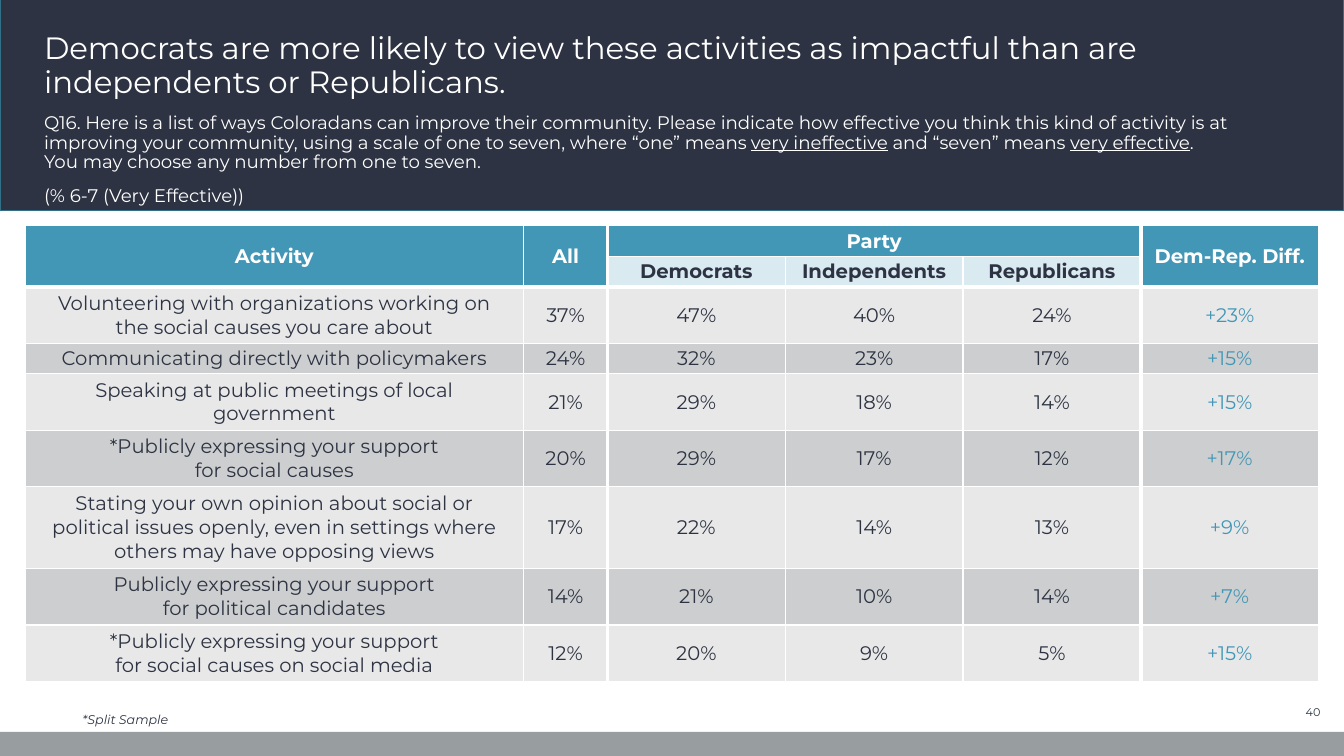
import pptx
import pptx.util
import pptx.dml.color
import pptx.enum.shapes
import pptx.enum.text
from lxml import etree

Cm, Pt = pptx.util.Cm, pptx.util.Pt
RGBColor = pptx.dml.color.RGBColor
ALIGN, ANCHOR = pptx.enum.text.PP_ALIGN, pptx.enum.text.MSO_ANCHOR

# Content
HEADLINE = ("Democrats are more likely to view these activities as impactful "
            "than are independents or Republicans.")
QUESTION = [  # (text, underlined)
    ("Q16. Here is a list of ways Coloradans can improve their community. "
     "Please indicate how effective you think this kind of activity is at "
     "improving your community, using a scale of one to seven, where “one” means ", False),
    ("very ineffective", True),
    (" and “seven” means ", False),
    ("very effective", True),
    (".", False),
]
QUESTION_END = "You may choose any number from one to seven."
MEASURE = "(% 6-7 (Very Effective))"
FOOTNOTE = "*Split Sample"
PAGE_NUMBER = "40"

HEADINGS = [
    ("Activity", "All", "Party", "", "", "Dem-Rep. Diff."),
    ("", "", "Democrats", "Independents", "Republicans", ""),
]
RATINGS = [  # activity (\v breaks the line), all, dem., ind., rep., difference
    ("Volunteering with organizations working on\vthe social causes you care about",
     "37%", "47%", "40%", "24%", "+23%"),
    ("Communicating directly with policymakers", "24%", "32%", "23%", "17%", "+15%"),
    ("Speaking at public meetings of local government", "21%", "29%", "18%", "14%", "+15%"),
    ("*Publicly expressing your support\vfor social causes", "20%", "29%", "17%", "12%", "+17%"),
    ("Stating your own opinion about social or\vpolitical issues openly, even in "
     "settings where others may have opposing views", "17%", "22%", "14%", "13%", "+9%"),
    ("Publicly expressing your support\vfor political candidates",
     "14%", "21%", "10%", "14%", "+7%"),
    ("*Publicly expressing your support\vfor social causes on social media",
     "12%", "20%", "9%", "5%", "+15%"),
]
MERGES = [((0, 0), (1, 0)), ((0, 1), (1, 1)), ((0, 2), (0, 4)), ((0, 5), (1, 5))]
COLUMN_WIDTHS = [12.57, 2.11] + [4.48] * 4
ROW_LINES = [1, 1, 2, 1, 2, 2, 3, 2, 2]
LINE_HEIGHTS = {1: 0.77, 2: 1.42, 3: 2.07}
THICK_COLUMN_EDGES = (2, 5)
THICK_ROW_EDGE = 2

# Style
FONT = "Montserrat"
NAVY = RGBColor(0x2D, 0x33, 0x42)
BAND_LINE = RGBColor(0x32, 0x70, 0x87)
GREY = RGBColor(0x98, 0x9D, 0xA0)
WHITE = RGBColor(0xFF, 0xFF, 0xFF)
TEAL = RGBColor(0x43, 0x97, 0xB6)
PALE_TEAL = RGBColor(0xD9, 0xEA, 0xF1)
ROW_FILLS = [RGBColor(0xE8, 0xE8, 0xE9), RGBColor(0xCD, 0xCE, 0xCF)]


def style(font, size, color, bold=False, italic=False):
    font.name, font.size, font.bold, font.italic = FONT, Pt(size), bold, italic
    font.color.rgb = color


def add_band(top, height, fill, line=None):
    band = slide.shapes.add_shape(pptx.enum.shapes.MSO_SHAPE.RECTANGLE,
                                  0, Cm(top), deck.slide_width, Cm(height))
    band.shadow.inherit = False
    band.fill.solid()
    band.fill.fore_color.rgb = fill
    if line is None:
        band.line.fill.background()
    else:
        band.line.color.rgb = line
        band.line.width = Pt(1)


def add_text(box, text, size, color, anchor=ANCHOR.TOP, align=ALIGN.LEFT, italic=False):
    frame = slide.shapes.add_textbox(*map(Cm, box)).text_frame
    frame.word_wrap = True
    frame.vertical_anchor = anchor
    paragraph = frame.paragraphs[0]
    paragraph.text = text
    paragraph.alignment = align
    paragraph.line_spacing = 0.9
    for run in paragraph.runs:
        style(run.font, size, color, italic=italic)
    return frame


def set_borders(cell, row, column):
    props = cell._tc.get_or_add_tcPr()
    right = column + cell.span_width if cell.is_merge_origin else column + 1
    bottom = row + cell.span_height if cell.is_merge_origin else row + 1
    thick = {"lnL": column in THICK_COLUMN_EDGES, "lnR": right in THICK_COLUMN_EDGES,
             "lnT": row == THICK_ROW_EDGE and column >= 2,
             "lnB": bottom == THICK_ROW_EDGE}
    for position, (side, is_thick) in enumerate(thick.items()):
        line = etree.Element(pptx.oxml.ns.qn("a:" + side), w=str(Pt(3 if is_thick else 1)))
        fill = etree.SubElement(line, pptx.oxml.ns.qn("a:solidFill"))
        etree.SubElement(fill, pptx.oxml.ns.qn("a:srgbClr"), val=str(WHITE))
        props.insert(position, line)


def cell_colors(row, column):
    """Fill and text colour of a table cell."""
    if row == 1 and 2 <= column <= 4:
        return PALE_TEAL, NAVY
    if row < 2:
        return TEAL, WHITE
    return ROW_FILLS[row % 2], TEAL if column == 5 else NAVY


deck = pptx.Presentation()
deck.slide_width, deck.slide_height = Cm(33.87), Cm(19.05)
slide = deck.slides.add_slide(deck.slide_layouts[6])

# Bands
add_band(-0.08, 5.38, NAVY, BAND_LINE)
add_band(18.44, 0.61, GREY)

# Page number, question and footnote
add_text((31.55, 17.65, 1.98, 0.61), PAGE_NUMBER, 8, NAVY, ANCHOR.MIDDLE, ALIGN.RIGHT)
question = add_text((0.86, 2.74, 32.11, 2.34), "", 13, WHITE)
wording = question.paragraphs[0]
for text, underlined in QUESTION:
    run = wording.add_run()
    run.text = text
    run.font.underline = underlined
wording.add_line_break()
wording.add_run().text = QUESTION_END
measure = question.add_paragraph()
measure.text = MEASURE
measure.line_spacing = 0.9
measure.space_before = Pt(10)
for run in wording.runs + measure.runs:
    style(run.font, 13, WHITE)
add_text((1.83, 17.65, 29.69, 0.79), FOOTNOTE, 9, NAVY, ANCHOR.BOTTOM, italic=True)

# Ratings table
cells = HEADINGS + RATINGS
row_heights = [LINE_HEIGHTS[lines] for lines in ROW_LINES]
table = slide.shapes.add_table(len(cells), len(COLUMN_WIDTHS), Cm(0.63), Cm(5.69),
                               Cm(sum(COLUMN_WIDTHS)), Cm(sum(row_heights))).table
table.horz_banding = False
for column, width in zip(table.columns, COLUMN_WIDTHS):
    column.width = Cm(width)
for row, height in zip(table.rows, row_heights):
    row.height = Cm(height)
for first, last in MERGES:
    table.cell(*first).merge(table.cell(*last))
for r, texts in enumerate(cells):
    for c, text in enumerate(texts):
        cell = table.cell(r, c)
        fill, color = cell_colors(r, c)
        cell.fill.solid()
        cell.fill.fore_color.rgb = fill
        set_borders(cell, r, c)
        cell.margin_left = cell.margin_right = Cm(0.25)
        cell.margin_top = cell.margin_bottom = Cm(0.05)
        cell.vertical_anchor = ANCHOR.MIDDLE
        paragraph = cell.text_frame.paragraphs[0]
        paragraph.text = text
        paragraph.alignment = ALIGN.CENTER
        style(paragraph.font, 14, color, bold=r < 2)
        for run in paragraph.runs:
            style(run.font, 14, color, bold=r < 2)

# Headline
add_text((0.86, 0.18, 32.11, 2.46), HEADLINE, 22, WHITE, ANCHOR.BOTTOM)

deck.save("out.pptx")
